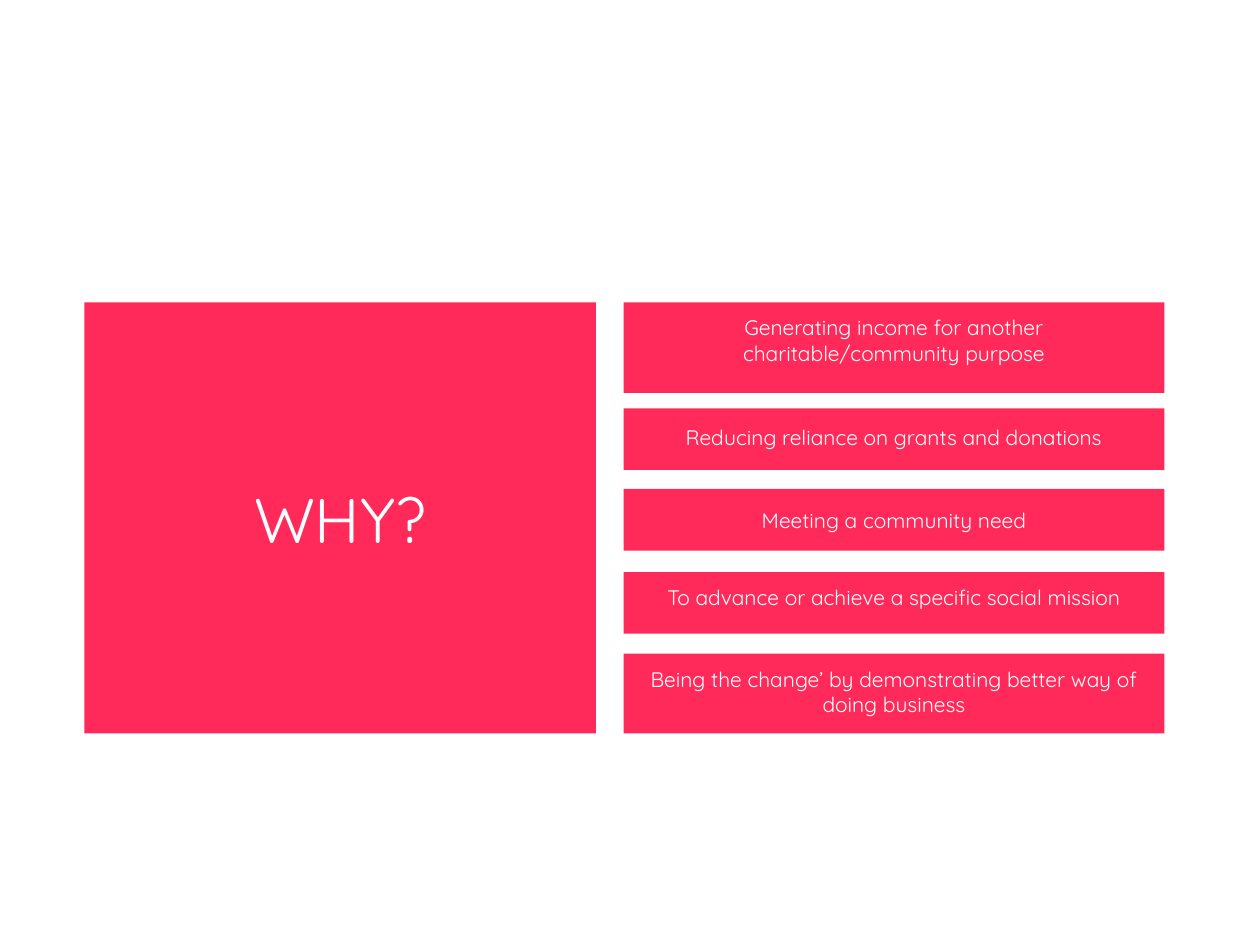
import pptx
import pptx.util
import pptx.dml.color
import pptx.enum.shapes
import pptx.enum.text

WIDTH, HEIGHT = 10, 7.5
FONT = "Quicksand"
RED, WHITE = "FF2A5A", "FFFFFF"
TOP = pptx.enum.text.MSO_ANCHOR.TOP
MIDDLE = pptx.enum.text.MSO_ANCHOR.MIDDLE

# Reason, top and height as shares of the column, anchor, line spacing
REASONS = [
    ("Generating income for another charitable/community purpose", 0, 0.21, TOP, 1),
    ("Reducing reliance on grants and donations", 0.246, 0.143, TOP, 1.15),
    ("Meeting a community need", 0.433, 0.143, MIDDLE, 1),
    ("To advance or achieve a specific social mission", 0.626, 0.143, TOP, 1),
    ("Being the change’ by demonstrating better way of doing business",
     0.815, 0.185, TOP, 1),
]


def color(value):
    return pptx.dml.color.RGBColor.from_string(value)


def place(sp, box):
    sp.left, sp.top, sp.width, sp.height = (pptx.util.Inches(v) for v in box)


def format_panel(sp, text, size, anchor, spacing=1, after=0):
    """Red panel with centred white text."""
    sp.fill.solid()
    sp.fill.fore_color.rgb = color(RED)
    sp.line.fill.background()
    tf = sp.text_frame
    tf.text = text
    tf.word_wrap = True
    tf.auto_size = pptx.enum.text.MSO_AUTO_SIZE.NONE
    tf.vertical_anchor = anchor
    tf.margin_left = tf.margin_right = pptx.util.Inches(0.1)
    tf.margin_top = tf.margin_bottom = pptx.util.Inches(0.1)
    p = tf.paragraphs[0]
    p.alignment = pptx.enum.text.PP_ALIGN.CENTER
    p.line_spacing = spacing
    p.space_before = pptx.util.Pt(0)
    p.space_after = pptx.util.Pt(after)
    font = p.runs[0].font
    font.name, font.size = FONT, pptx.util.Pt(size)
    font.color.rgb = color(WHITE)


def add_question(s, box):
    """Large panel holding the slide title."""
    sp = s.shapes.title
    place(sp, box)
    format_panel(sp, "WHY?", 36, MIDDLE)


def add_reasons(s, box):
    """Column of reason panels."""
    left, top, width, height = box
    for text, start, share, anchor, spacing in REASONS:
        sp = s.shapes.add_shape(pptx.enum.shapes.MSO_SHAPE.ROUNDED_RECTANGLE, 0, 0, 0, 0)
        place(sp, (left, top + start * height, width, share * height))
        sp.adjustments[0] = 0
        sp.shadow.inherit = False
        format_panel(sp, text, 12, anchor, spacing, after=8)


def main():
    prs = pptx.Presentation()
    prs.slide_width = pptx.util.Inches(WIDTH)
    prs.slide_height = pptx.util.Inches(HEIGHT)
    s = prs.slides.add_slide(prs.slide_layouts[5])
    s.background.fill.solid()
    s.background.fill.fore_color.rgb = color(WHITE)

    # Both regions share one band of the slide
    top, height = 0.32 * HEIGHT, 0.456 * HEIGHT
    add_question(s, (0.067 * WIDTH, top, 0.406 * WIDTH, height))
    add_reasons(s, (0.495 * WIDTH, top, 0.429 * WIDTH, height))
    prs.save("out.pptx")


if __name__ == "__main__":
    main()
